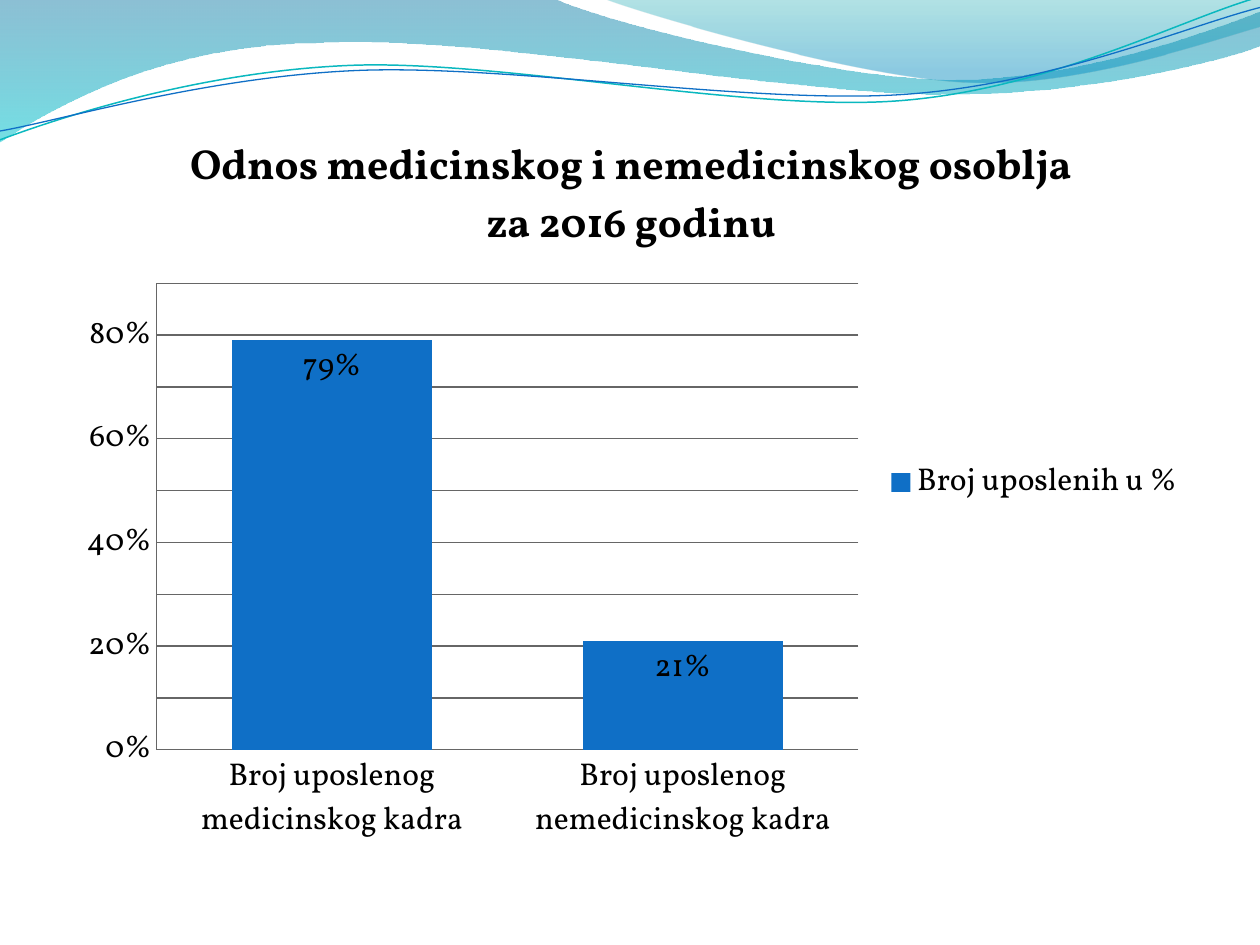
from dataclasses import dataclass
from math import cos, radians, sin

from lxml import etree
from pptx import Presentation
from pptx.chart.data import CategoryChartData
from pptx.dml.color import RGBColor
from pptx.enum import chart as ec
from pptx.oxml import ns, parse_xml
from pptx.util import Pt


@dataclass(frozen=True)
class Theme:
    font: str = "Vollkorn"
    body: int = 18
    head: int = 24
    ink: str = "000000"
    grid: str = "666666"
    blue: str = "0F6FC6"
    teal: str = "0AB8BF"
    # Gradient stops: position %, colour, opacity %
    deep: tuple = ((0, "0074A1", 45), (100, "00C6CF", 55))
    pale: tuple = ((0, "00A1A9", 30), (80, "008BBF", 45))


THEME = Theme()
TILT = 357.3

# Each wave is a start point, then steps: one point is a line, three a Bezier.
BAND = [
    [(0, -0.7)],
    [(316.8, -0.7)],
    [(342.7, 12.2), (478.1, 45.4), (545.8, 45.4)],
    [(614.2, 45.4), (689.8, 18.7), (720, 6.5)],
    [(720.7, 25.9)],
    [(707.8, 31.7), (626.4, 54.7), (537.1, 54)],
    [(447.8, 54), (275, 20.2), (185, 24.5)],
    [(92.9, 25.2), (33.1, 59.8), (-0.7, 81.4)],
    [(0, -0.7)],
]
CREST = [
    [(344.9, -0.7)],
    [(366.5, 7.9), (491, 44.6), (553.7, 46.8)],
    [(616.3, 49.7), (691.9, 23), (720, 15.1)],
    [(720, 0)],
    [(344.9, -0.7)],
]
UPPER = [
    [(0, 79.9)],
    [(34.6, 67), (113.8, 41), (199.4, 37.4)],
    [(284.4, 33.8), (427, 64.1), (513.4, 57.6)],
    [(599.8, 51.1), (675.4, 10.8), (718.6, -1.4)],
]
LOWER = [
    [(0, 74.9)],
    [(33.8, 69.1), (118.1, 43.9), (203.8, 40.3)],
    [(290.2, 36.7), (429.8, 59.8), (516.2, 54)],
    [(601.9, 48.2), (677.5, 15.1), (720, 4.3)],
]


def rgb(code):
    return RGBColor.from_string(code)


def level(steps, mid):
    """Turn a wave about mid so that a shape tilted by TILT shows it as given."""
    cx, cy = mid
    turn = radians(-TILT)
    c, s = cos(turn), sin(turn)
    return [[(cx + (x - cx) * c - (y - cy) * s, cy + (x - cx) * s + (y - cy) * c)
             for x, y in step] for step in steps]


def bend(shape, steps):
    """Join the line segments of each three-point step into one Bezier."""
    route = shape.element.find(".//" + ns.qn("a:moveTo")).getparent()
    lines = iter(route.findall(ns.qn("a:lnTo")))
    for step in steps[1:]:
        group = [next(lines) for _ in step]
        if len(group) == 3:
            curve = etree.Element(ns.qn("a:cubicBezTo"))
            group[0].addprevious(curve)
            for line in group:
                curve.append(line[0])
                route.remove(line)


def wave(slide, box, steps, closed):
    left, top = box[:2]
    pts = [(Pt(left + x), Pt(top + y)) for step in steps for x, y in step]
    pen = slide.shapes.build_freeform(*pts[0])
    pen.add_line_segments(pts[1:], close=closed)
    shape = pen.convert_to_shape()
    bend(shape, steps)
    shape.shadow.inherit = False
    return shape


def shade(shape, stops):
    """Fill a shape from top to bottom with translucent stops."""
    shape.line.fill.background()
    shape.fill.background()
    marks = "".join(
        f'<a:gs pos="{pos * 1000}"><a:srgbClr val="{code}">'
        f'<a:alpha val="{alpha * 1000}"/></a:srgbClr></a:gs>'
        for pos, code, alpha in stops)
    grad = parse_xml(
        f'<a:gradFill {ns.nsdecls("a")} rotWithShape="1"><a:gsLst>{marks}</a:gsLst>'
        '<a:lin ang="5400000" scaled="0"/></a:gradFill>')
    props = shape.element.spPr
    props.replace(props.find(ns.qn("a:noFill")), grad)


def header(slide, box):
    for steps, stops in ((BAND, THEME.deep), (CREST, THEME.pale)):
        shade(wave(slide, box, steps, True), stops)
    for steps, mid, code, width in (
            (UPPER, (359.3, 41.4), THEME.teal, 0.85),
            (LOWER, (359.6, 42.5), THEME.blue, 0.75)):
        curve = wave(slide, box, level(steps, mid), False)
        curve.rotation = TILT
        curve.fill.background()
        curve.line.color.rgb = rgb(code)
        curve.line.width = Pt(width)


def staff(slide, box):
    data = CategoryChartData(number_format="0%")
    data.categories = ["Broj uposlenog medicinskog kadra",
                       "Broj uposlenog nemedicinskog kadra"]
    data.add_series("Broj uposlenih u %", (0.79, 0.21))
    frame = slide.shapes.add_chart(
        ec.XL_CHART_TYPE.COLUMN_CLUSTERED, *map(Pt, box), data)
    chart = frame.chart
    chart.font.name = THEME.font
    chart.font.size = Pt(THEME.body)
    chart.font.color.rgb = rgb(THEME.ink)

    chart.has_title = True
    title = chart.chart_title
    title.include_in_layout = False
    para = title.text_frame.paragraphs[0]
    para.text = "Odnos medicinskog i nemedicinskog osoblja za 2016 godinu"
    font = para.runs[0].font
    font.name, font.size, font.bold = THEME.font, Pt(THEME.head), True
    font.color.rgb = rgb(THEME.ink)

    chart.has_legend = True
    chart.legend.position = ec.XL_LEGEND_POSITION.RIGHT
    chart.legend.include_in_layout = False

    plot = chart.plots[0]
    plot.vary_by_categories = False
    plot.gap_width, plot.overlap = 75, 40
    fill = plot.series[0].format.fill
    fill.solid()
    fill.fore_color.rgb = rgb(THEME.blue)
    plot.has_data_labels = True
    labels = plot.data_labels
    labels.show_value = True
    labels.position = ec.XL_LABEL_POSITION.INSIDE_END
    labels.number_format, labels.number_format_is_linked = "0%", False

    scale = chart.value_axis
    scale.tick_labels.number_format = "0%"
    scale.tick_labels.number_format_is_linked = False
    scale.has_major_gridlines = True
    for axis in (chart.category_axis, scale):
        axis.major_tick_mark = axis.minor_tick_mark = ec.XL_TICK_MARK.NONE
    for part in (chart.category_axis, scale, scale.major_gridlines):
        part.format.line.color.rgb = rgb(THEME.grid)
        part.format.line.width = Pt(0.75)


def main():
    deck = Presentation()
    deck.slide_width, deck.slide_height = Pt(720), Pt(540)
    slide = deck.slides.add_slide(deck.slide_layouts[6])
    header(slide, (0, 0, 720, 82))
    staff(slide, (36.5, 60.5, 648, 430.5))
    deck.save("out.pptx")


if __name__ == "__main__":
    main()
